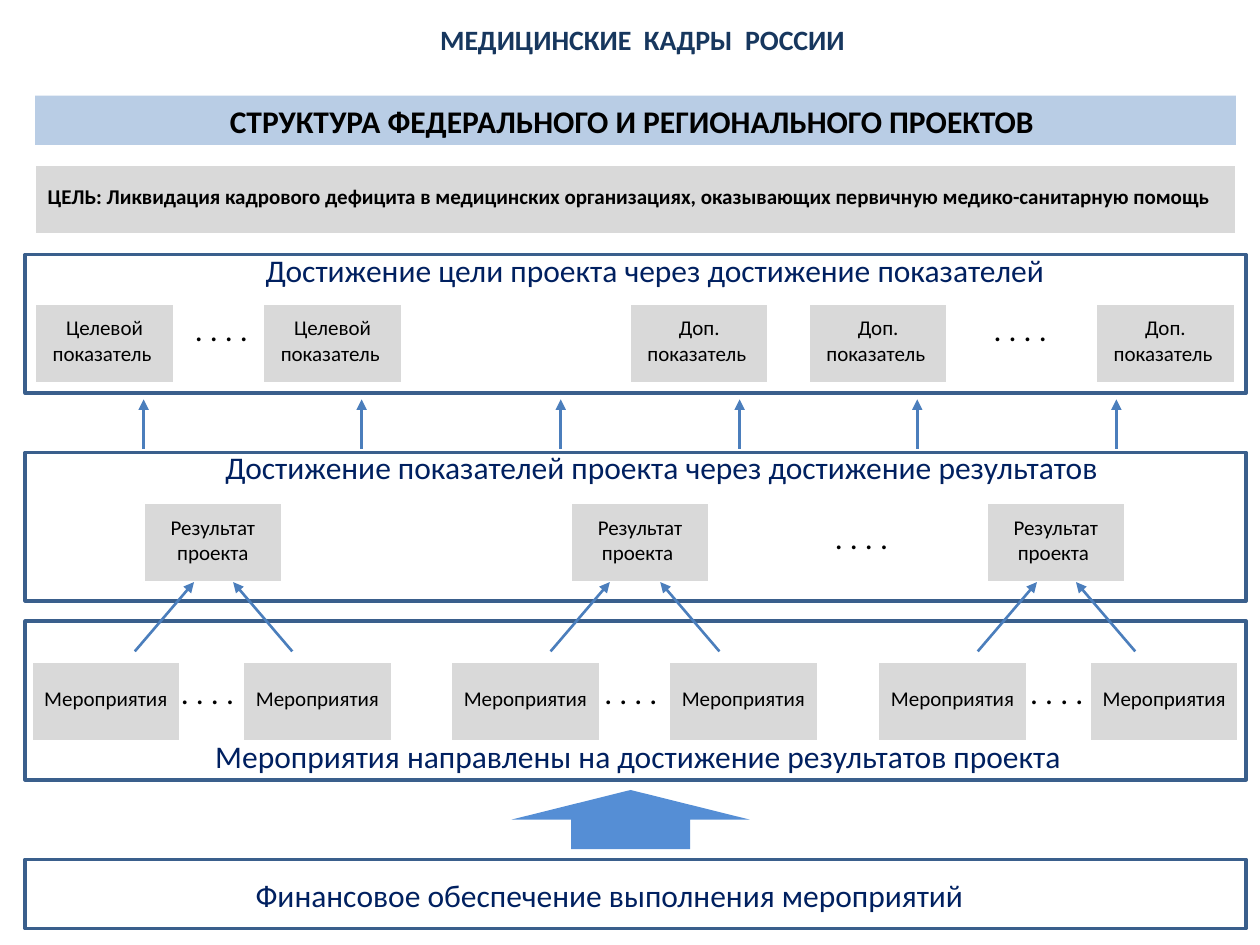
from pptx import Presentation
from pptx.dml.color import RGBColor
from pptx.enum.shapes import MSO_CONNECTOR, MSO_SHAPE
from pptx.enum.text import MSO_ANCHOR, MSO_AUTO_SIZE, PP_ALIGN
from pptx.oxml.ns import qn
from pptx.util import Inches, Pt
from lxml.etree import SubElement

BLACK = RGBColor(0x00, 0x00, 0x00)
WHITE = RGBColor(0xFF, 0xFF, 0xFF)
GREY = RGBColor(0xD9, 0xD9, 0xD9)
TITLE_BLUE = RGBColor(0x17, 0x37, 0x5E)
BANNER_BLUE = RGBColor(0xB9, 0xCD, 0xE5)
CAPTION_BLUE = RGBColor(0x00, 0x20, 0x60)
FRAME_BLUE = RGBColor(0x3A, 0x5F, 0x8C)
ARROW_BLUE = RGBColor(0x4B, 0x7E, 0xBC)
BIG_ARROW_BLUE = RGBColor(0x55, 0x8E, 0xD5)

BOX_HEIGHT = 0.63
INDICATOR_TOP, RESULT_TOP, ACTIVITY_TOP = 2.41, 3.99, 5.25
FRAMES = [(2.02, 1.10), (3.59, 1.18), (4.93, 1.26), (6.82, 0.55)]
CAPTIONS = [
    (2.01, 1.94, 6.46, "Достижение цели проекта через достижение показателей"),
    (1.69, 3.51, 7.27, "Достижение показателей проекта через достижение результатов"),
    (1.61, 5.80, 6.99, "Мероприятия направлены на достижение результатов проекта"),
    (1.93, 6.90, 5.98, "Финансовое обеспечение выполнения мероприятий"),
]
INDICATORS = [
    (0.28, "Целевой показатель "),
    (2.09, "Целевой показатель "),
    (5.00, "Доп. показатель "),
    (6.42, "Доп. показатель "),
    (8.70, "Доп. показатель "),
]
RESULTS = [(1.14, "Результат проекта"), (4.53, "Результат проекта "),
           (7.83, "Результат проекта ")]
ACTIVITIES = [(left, "Мероприятия") for left in (0.25, 1.93, 3.58, 5.31, 6.97, 8.65)]
DOTS = [(1.44, 2.41), (7.78, 2.41), (6.52, 4.06), (1.33, 5.29), (4.69, 5.29), (8.07, 5.29)]
INDICATOR_ARROWS = [1.14, 2.87, 4.45, 5.87, 7.28, 8.86]
RESULT_ARROW_TIPS = [(1.54, 1.85), (4.84, 5.24), (8.23, 8.54)]
RESULT_ARROW_RUN = 0.47


class SlideBuilder:
    def __init__(self, slide, font_name="Calibri"):
        self.slide = slide
        self.font_name = font_name

    def set_text(self, shape, text, size, color, align, bold=False):
        paragraph = shape.text_frame.paragraphs[0]
        paragraph.text = text
        paragraph.alignment = align
        font = paragraph.font
        font.name, font.size, font.bold = self.font_name, Pt(size), bold
        font.color.rgb = color
        return paragraph

    def title(self, left, top, width, height, text):
        title = self.slide.shapes.title
        title.left, title.top = Inches(left), Inches(top)
        title.width, title.height = Inches(width), Inches(height)
        title.text_frame.auto_size = MSO_AUTO_SIZE.NONE
        title.text_frame.vertical_anchor = MSO_ANCHOR.MIDDLE
        paragraph = self.set_text(title, text, 16, TITLE_BLUE, PP_ALIGN.CENTER, bold=True)
        paragraph.line_spacing = 0.8

    def shape(self, left, top, width, height, fill=None, line=None, line_width=1.25,
              kind=MSO_SHAPE.RECTANGLE):
        shape = self.slide.shapes.add_shape(
            kind, Inches(left), Inches(top), Inches(width), Inches(height))
        shape.shadow.inherit = False
        if fill is None:
            shape.fill.background()
        else:
            shape.fill.solid()
            shape.fill.fore_color.rgb = fill
        if line is None:
            shape.line.fill.background()
        else:
            shape.line.color.rgb = line
            shape.line.width = Pt(line_width)
        return shape

    def banner(self, left, top, width, height, text):
        banner = self.shape(left, top, width, height, BANNER_BLUE)
        banner.text_frame.vertical_anchor = MSO_ANCHOR.TOP
        self.set_text(banner, text, 18, BLACK, PP_ALIGN.CENTER, bold=True)

    def box(self, left, top, width, height, text, align=PP_ALIGN.CENTER, bold=False):
        box = self.shape(left, top, width, height, GREY, WHITE)
        box.text_frame.margin_top = 0
        box.text_frame.vertical_anchor = MSO_ANCHOR.MIDDLE
        self.set_text(box, text, 12, BLACK, align, bold)

    def label(self, left, top, width, text, color, align):
        label = self.slide.shapes.add_textbox(
            Inches(left), Inches(top), Inches(width), Inches(0.4))
        label.text_frame.word_wrap = False
        label.text_frame.auto_size = MSO_AUTO_SIZE.SHAPE_TO_FIT_TEXT
        self.set_text(label, text, 18, color, align)

    def arrow(self, start_x, start_y, end_x, end_y):
        arrow = self.slide.shapes.add_connector(
            MSO_CONNECTOR.STRAIGHT, Inches(start_x), Inches(start_y),
            Inches(end_x), Inches(end_y))
        arrow.line.color.rgb = ARROW_BLUE
        arrow.line.width = Pt(1.5)
        properties = arrow._element.spPr
        SubElement(properties.find(qn("a:ln")), qn("a:tailEnd"), type="triangle")
        SubElement(properties, qn("a:effectLst"))


def main():
    presentation = Presentation()
    presentation.slide_width, presentation.slide_height = Inches(10), Inches(7.5)
    builder = SlideBuilder(presentation.slides.add_slide(presentation.slide_layouts[5]))

    builder.title(0.71, 0.15, 8.78, 0.37, "МЕДИЦИНСКИЕ  КАДРЫ  РОССИИ")
    builder.banner(0.28, 0.76, 9.53, 0.39,
                   "СТРУКТУРА ФЕДЕРАЛЬНОГО И РЕГИОНАЛЬНОГО ПРОЕКТОВ ")
    builder.box(0.28, 1.31, 9.53, 0.55,
                "ЦЕЛЬ: Ликвидация кадрового дефицита в медицинских организациях, "
                "оказывающих первичную медико-санитарную помощь",
                PP_ALIGN.JUSTIFY, bold=True)

    for top, height in FRAMES:
        builder.shape(0.2, top, 9.69, height, line=FRAME_BLUE, line_width=2)
    for row_top, width, boxes in [(INDICATOR_TOP, 1.10, INDICATORS),
                                  (RESULT_TOP, 1.10, RESULTS),
                                  (ACTIVITY_TOP, 1.18, ACTIVITIES)]:
        for left, text in boxes:
            builder.box(left, row_top, width, BOX_HEIGHT, text)
    for left, top in DOTS:
        builder.label(left, top, 0.69, ". . . . ", BLACK, PP_ALIGN.CENTER)
    for left, top, width, text in CAPTIONS:
        builder.label(left, top, width, text, CAPTION_BLUE, PP_ALIGN.LEFT)

    for x in INDICATOR_ARROWS:
        builder.arrow(x, 3.56, x, 3.17)
    for left_tip, right_tip in RESULT_ARROW_TIPS:
        builder.arrow(left_tip - RESULT_ARROW_RUN, 5.17, left_tip, 4.62)
        builder.arrow(right_tip + RESULT_ARROW_RUN, 5.17, right_tip, 4.62)
    builder.shape(4.06, 6.27, 1.89, 0.47, BIG_ARROW_BLUE, kind=MSO_SHAPE.UP_ARROW)

    presentation.save("out.pptx")


if __name__ == "__main__":
    main()
